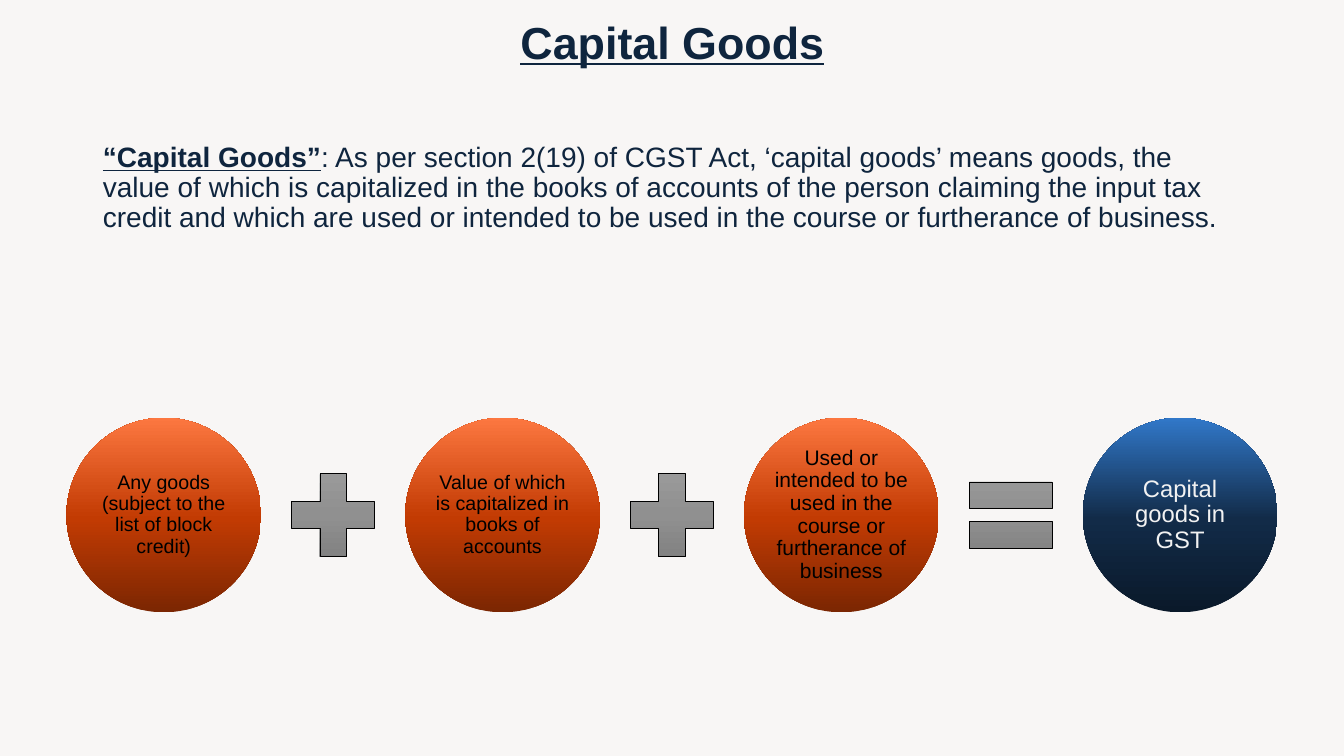
from lxml import etree
from pptx import Presentation
from pptx.dml.color import RGBColor
from pptx.enum.shapes import MSO_SHAPE
from pptx.enum.text import MSO_ANCHOR, MSO_AUTO_SIZE, PP_ALIGN
from pptx.oxml.ns import qn
from pptx.util import Inches, Pt

OVAL, PLUS, EQUAL = MSO_SHAPE.OVAL, MSO_SHAPE.MATH_PLUS, MSO_SHAPE.MATH_EQUAL
MIDDLE, TOP = MSO_ANCHOR.MIDDLE, MSO_ANCHOR.TOP
CENTER, LEFT = PP_ALIGN.CENTER, PP_ALIGN.LEFT
FIXED = MSO_AUTO_SIZE.NONE

NAVY, BLACK, PALE = "0F253E", "000000", "F2F2F2"
ORANGE = [(0, "7B2602"), (48, "C23B03"), (100, "FC7740")]
BLUE = [(0, "0A192A"), (48, "122B48"), (100, "3178C9")]
GRAY = [(0, "9D9D9D"), (50, "909090"), (100, "7C7C7C")]

TITLE = [("Capital Goods", True)]
BODY = [
    ("“Capital Goods”", True),
    (": As per section 2(19) of CGST Act, ‘capital goods’ means goods, the value of which "
     "is capitalized in the books of accounts of the person claiming the input tax credit "
     "and which are used or intended to be used in the course or furtherance of business.", False),
]
TERMS = [
    ("Any goods (subject to the list of block credit)", 14, BLACK, ORANGE),
    ("Value of which is capitalized in books of accounts", 14, BLACK, ORANGE),
    ("Used or intended to be used in the course or furtherance of business", 15, BLACK, ORANGE),
    ("Capital goods in GST", 17, PALE, BLUE),
]
SIGNS = [PLUS, PLUS, EQUAL]

WIDE, HIGH = 13.33, 7.5
DISC, SIGN, PITCH = 1.93, 1.12, 3.36
ROW = 5.11
EDGE = (WIDE - PITCH * (len(TERMS) - 1) - DISC) / 2


def color(code):
    return RGBColor.from_string(code)


def apply(item, values):
    for name, value in values.items():
        setattr(item, name, value)


def write(shape, runs, size, tint, align, anchor, before=0, inset=None):
    frame = shape.text_frame
    apply(frame, {"word_wrap": True, "auto_size": FIXED, "vertical_anchor": anchor})
    if inset is not None:
        sides = ("left", "top", "right", "bottom")
        apply(frame, {"margin_" + side: Inches(inset) for side in sides})
    para = frame.paragraphs[0]
    apply(para, {"alignment": align, "line_spacing": 0.9, "space_before": Pt(before)})
    for text, strong in runs:
        run = para.add_run()
        run.text = text
        apply(run.font, {"name": "Arial", "size": Pt(size), "bold": strong, "underline": strong})
        run.font.color.rgb = color(tint)
    return para


def place(shape, left, top, width, height):
    apply(shape, {"left": Inches(left), "top": Inches(top),
                  "width": Inches(width), "height": Inches(height)})


def blend(shape, stops, angle):
    shape.fill.gradient()
    shape.fill.gradient_angle = angle
    group = shape.element.spPr.find(".//" + qn("a:gsLst"))
    group.clear()
    for share, code in stops:
        stop = etree.SubElement(group, qn("a:gs"), pos=str(share * 1000))
        etree.SubElement(stop, qn("a:srgbClr"), val=code)


def draw(slide, kind, middle, size, stops, angle):
    shape = slide.shapes.add_shape(kind, Inches(middle - size / 2), Inches(ROW - size / 2),
                                   Inches(size), Inches(size))
    shape.shadow.inherit = False
    blend(shape, stops, angle)
    return shape


def main():
    deck = Presentation()
    apply(deck, {"slide_width": Inches(WIDE), "slide_height": Inches(HIGH)})
    slide = deck.slides.add_slide(deck.slide_layouts[1])
    slide.background.fill.solid()
    slide.background.fill.fore_color.rgb = color("F8F6F5")

    title, body = slide.shapes.title, slide.placeholders[1]
    place(title, 0.92, 0.15, 11.5, 0.59)
    write(title, TITLE, 32, NAVY, CENTER, MIDDLE)
    place(body, 0.92, 1.37, 11.5, 4.76)
    para = write(body, BODY, 20, NAVY, LEFT, TOP, before=10)
    props = para._p.get_or_add_pPr()
    apply_none = {"marL": "0", "indent": "0"}
    for name, value in apply_none.items():
        props.set(name, value)
    etree.SubElement(props, qn("a:buNone"))

    first = EDGE + DISC / 2
    for spot, (text, size, tint, stops) in enumerate(TERMS):
        disc = draw(slide, OVAL, first + spot * PITCH, DISC, stops, 90)
        disc.line.fill.background()
        write(disc, [(text, False)], size, tint, CENTER, MIDDLE, inset=0.02)
    for spot, kind in enumerate(SIGNS):
        sign = draw(slide, kind, first + (spot + 0.5) * PITCH, SIGN, GRAY, 270)
        sign.line.color.rgb = color(BLACK)
        sign.line.width = Pt(0.5)

    deck.save("out.pptx")


if __name__ == "__main__":
    main()
